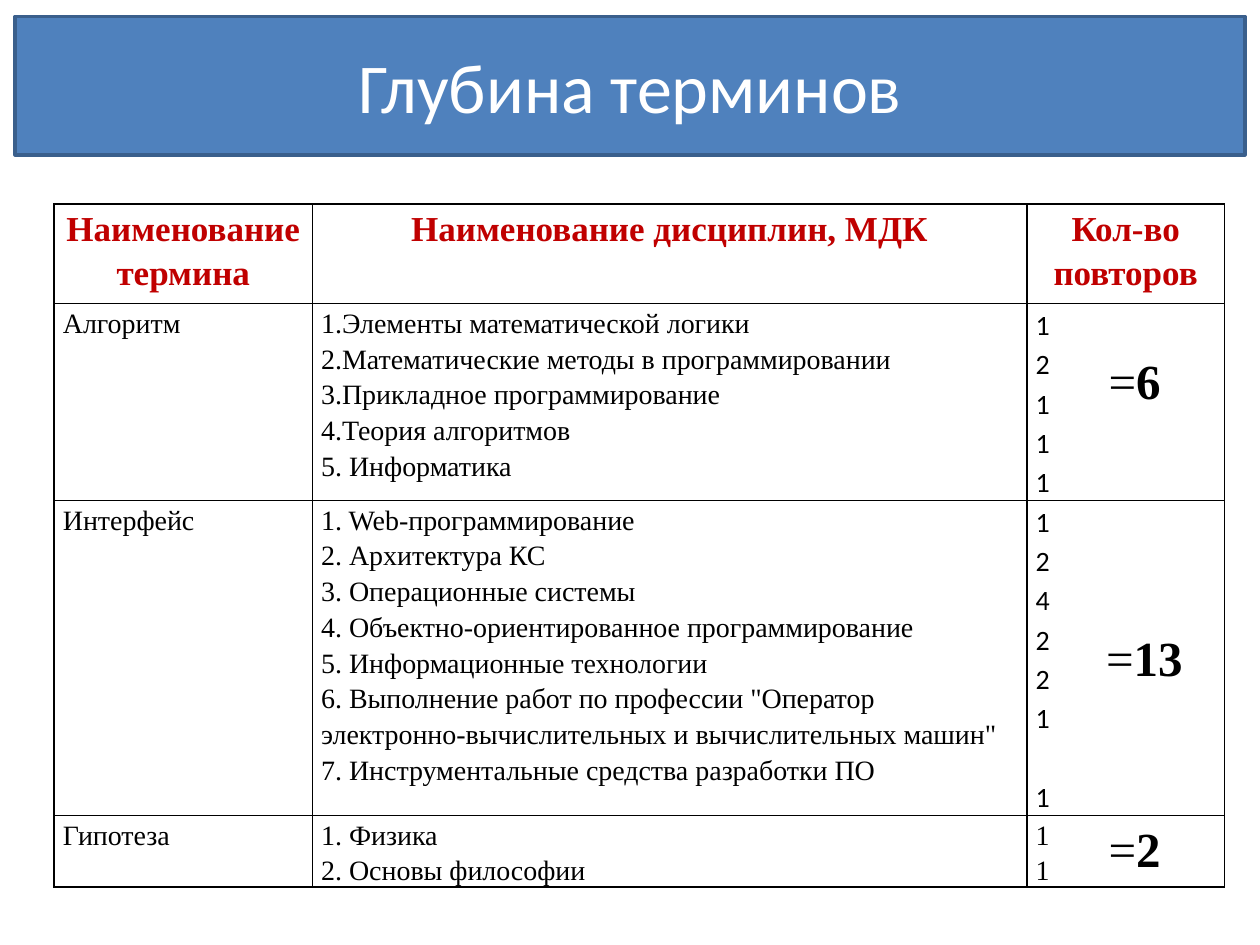
"""Build the slide on how often terms recur across disciplines."""
from dataclasses import dataclass

from lxml.etree import SubElement
from pptx import Presentation
from pptx.dml.color import RGBColor
from pptx.enum.text import MSO_ANCHOR, MSO_AUTO_SIZE, PP_ALIGN
from pptx.oxml import parse_xml
from pptx.oxml.ns import nsdecls, qn
from pptx.util import Inches, Pt

BLUE = RGBColor(0x4F, 0x81, 0xBD)
DARK_BLUE = RGBColor(0x3A, 0x5F, 0x8C)
RED = RGBColor(0xC0, 0x00, 0x00)
BLACK = RGBColor(0x00, 0x00, 0x00)
WHITE = RGBColor(0xFF, 0xFF, 0xFF)
SERIF = "Times New Roman"
SANS = "Calibri"

COLUMN_WIDTHS = (2.05, 5.67, 1.57)
HEADER_HEIGHT = 0.79
HEADERS = ("Наименование термина", "Наименование дисциплин, МДК", "Кол-во повторов")


@dataclass
class Total:
    value: int
    left: float
    top: float
    width: float


@dataclass
class Term:
    name: str
    disciplines: list[str]
    counts: list[int]
    height: float
    total: Total
    count_font: str = SANS
    last_count_gap: float = 0


TERMS = [
    Term("Алгоритм",
         ["1.Элементы математической логики",
          "2.Математические методы в программировании",
          "3.Прикладное программирование",
          "4.Теория алгоритмов",
          "5. Информатика"],
         [1, 2, 1, 1, 1], 1.56, Total(6, 8.7, 2.73, 0.79)),
    Term("Интерфейс",
         ["1. Web-программирование",
          "2. Архитектура КС",
          "3. Операционные системы",
          "4. Объектно-ориентированное программирование",
          "5. Информационные технологии",
          "6. Выполнение работ по профессии \"Оператор "
          "электронно-вычислительных и вычислительных машин\"",
          "7. Инструментальные средства разработки ПО"],
         [1, 2, 4, 2, 2, 1, 1], 2.5, Total(13, 8.68, 4.93, 1.05), last_count_gap=22.5),
    Term("Гипотеза",
         ["1. Физика", "2. Основы философии"],
         [1, 1], 0.57, Total(2, 8.7, 6.45, 1.05), count_font=SERIF),
]


def format_run(run, font_name: str, size: float, color: RGBColor, bold: bool = False) -> None:
    font = run.font
    font.name, font.size, font.bold = font_name, Pt(size), bold
    font.color.rgb = color


def draw_title(slide, text: str) -> None:
    title = slide.shapes.title
    title.left, title.top = Inches(0.12), Inches(0.13)
    title.width, title.height = Inches(9.76), Inches(1.1)
    geometry = SubElement(title.element.spPr, qn("a:prstGeom"), prst="round2DiagRect")
    SubElement(geometry, qn("a:avLst"))
    title.fill.solid()
    title.fill.fore_color.rgb = BLUE
    title.line.color.rgb = DARK_BLUE
    title.line.width = Pt(2)
    frame = title.text_frame
    frame.text = text
    frame.vertical_anchor = MSO_ANCHOR.MIDDLE
    paragraph = frame.paragraphs[0]
    paragraph.alignment = PP_ALIGN.CENTER
    format_run(paragraph.runs[0], SANS, 40, WHITE)


def set_borders(cell) -> None:
    properties = cell._tc.get_or_add_tcPr()
    for index, side in enumerate(("lnL", "lnR", "lnT", "lnB")):
        border = parse_xml(
            f'<a:{side} {nsdecls("a")} w="{Pt(1)}"><a:solidFill>'
            f'<a:srgbClr val="{BLACK}"/></a:solidFill></a:{side}>')
        properties.insert(index, border)


def fill_cell(cell, lines: list[str], font_name: str = SERIF, size: float = 16,
              color: RGBColor = BLACK, header: bool = False) -> None:
    cell.margin_left = cell.margin_right = Inches(0.07)
    cell.margin_top = cell.margin_bottom = 0
    cell.fill.background()
    set_borders(cell)
    cell.text_frame.text = "\n".join(lines)
    for paragraph in cell.text_frame.paragraphs:
        paragraph.line_spacing = 1.15
        paragraph.alignment = PP_ALIGN.CENTER if header else PP_ALIGN.LEFT
        format_run(paragraph.runs[0], font_name, size, color, header)


def draw_table(slide, terms: list[Term]) -> None:
    heights = [HEADER_HEIGHT] + [term.height for term in terms]
    table = slide.shapes.add_table(
        len(heights), len(COLUMN_WIDTHS), Inches(0.43), Inches(1.62),
        Inches(sum(COLUMN_WIDTHS)), Inches(sum(heights))).table
    table.first_row = table.horz_banding = False
    for column, width in zip(table.columns, COLUMN_WIDTHS):
        column.width = Inches(width)
    for row, height in zip(table.rows, heights):
        row.height = Inches(height)
    for index, header in enumerate(HEADERS):
        fill_cell(table.cell(0, index), [header], size=20, color=RED, header=True)
    for index, term in enumerate(terms, start=1):
        fill_cell(table.cell(index, 0), [term.name])
        fill_cell(table.cell(index, 1), term.disciplines)
        counts = table.cell(index, 2)
        fill_cell(counts, [str(count) for count in term.counts], term.count_font)
        counts.text_frame.paragraphs[-1].space_before = Pt(term.last_count_gap)


def draw_total(slide, total: Total) -> None:
    box = slide.shapes.add_textbox(
        Inches(total.left), Inches(total.top), Inches(total.width), Inches(0.57))
    frame = box.text_frame
    frame.word_wrap = True
    frame.auto_size = MSO_AUTO_SIZE.SHAPE_TO_FIT_TEXT
    for text, bold in (("=", False), (str(total.value), True)):
        run = frame.paragraphs[0].add_run()
        run.text = text
        format_run(run, SERIF, 28, BLACK, bold)


def main() -> None:
    presentation = Presentation()
    presentation.slide_width, presentation.slide_height = Inches(10), Inches(7.5)
    slide = presentation.slides.add_slide(presentation.slide_layouts[5])
    draw_title(slide, "Глубина терминов")
    draw_table(slide, TERMS)
    for term in TERMS:
        draw_total(slide, term.total)
    presentation.save("out.pptx")


if __name__ == "__main__":
    main()
